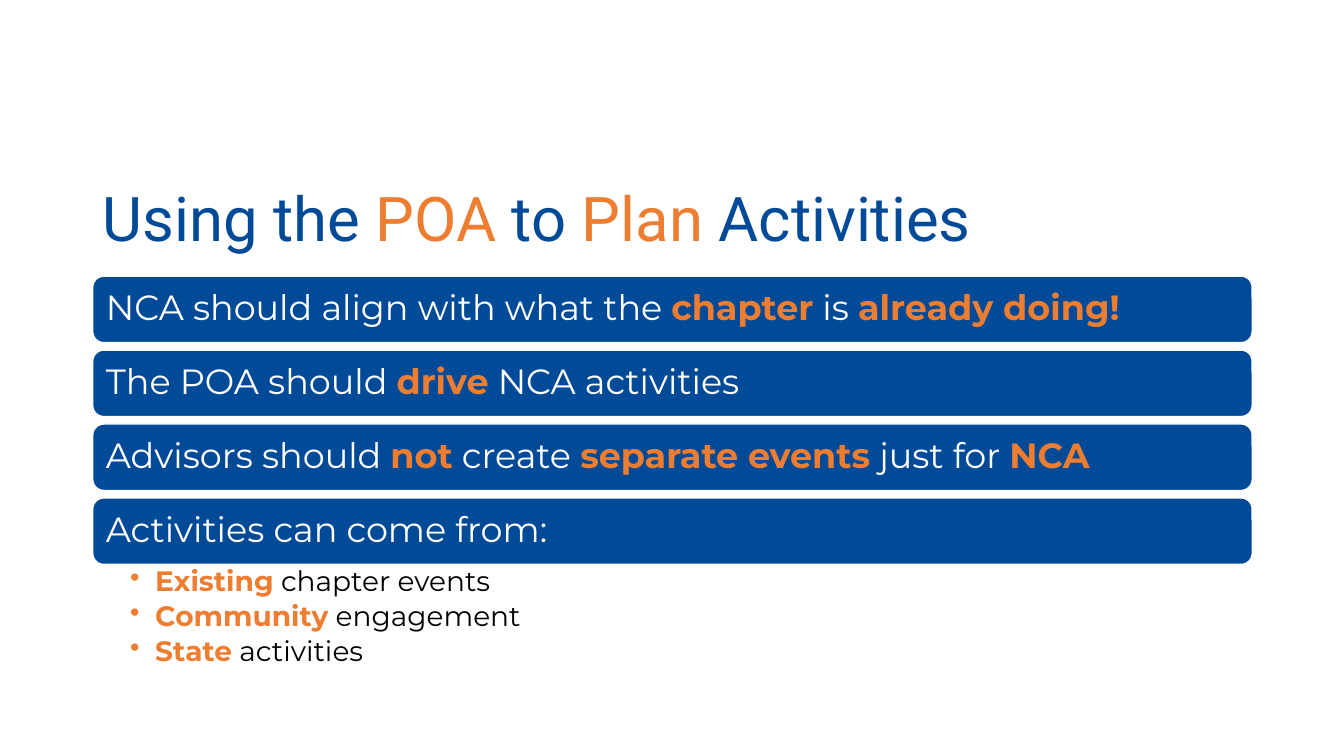
import pptx
import pptx.util
import pptx.dml.color
import pptx.enum.shapes
import pptx.enum.text
from dataclasses import dataclass
from lxml import etree

TITLE = "Using the *POA* to *Plan* Activities"
STATEMENTS = [
    "NCA should align with what the *chapter* is *already doing!*",
    "The POA should *drive* NCA activities",
    "Advisors should *not* create *separate events* just for *NCA*",
    "Activities can come from:",
]
SOURCES = ["*Existing* chapter events", "*Community* engagement", "*State* activities"]


@dataclass(frozen=True)
class Theme:
    blue: str = "004A98"
    orange: str = "ED7D31"
    white: str = "FFFFFF"
    black: str = "000000"
    heading: str = "Roboto"
    body: str = "Montserrat"
    title_size: int = 44
    statement_size: int = 25
    source_size: int = 20


THEME = Theme()
WIDTH, HEIGHT = 13.33, 7.5
LEFT, CONTENT_WIDTH = 0.92, 11.5
TITLE_TOP, TITLE_HEIGHT = 1.76, 0.87
BARS_TOP, BARS_BOTTOM, BAR_HEIGHT = 2.74, 5.6, 0.66
SOURCES_HEIGHT = 1.13
BAR_PITCH = (BARS_BOTTOM - BARS_TOP - BAR_HEIGHT) / (len(STATEMENTS) - 1)

inch = pptx.util.Inches
point = pptx.util.Pt
rgb = pptx.dml.color.RGBColor.from_string
anchors = pptx.enum.text.MSO_ANCHOR


def prepare_frame(frame, anchor, insets):
    frame.word_wrap = True
    frame.vertical_anchor = anchor
    frame.margin_left, frame.margin_top, frame.margin_right, frame.margin_bottom = map(inch, insets)


def write(paragraph, marked_text, font_name, size, color, bold_emphasis=True):
    paragraph.alignment = pptx.enum.text.PP_ALIGN.LEFT
    paragraph.line_spacing = 0.9
    paragraph.font.name = font_name
    paragraph.font.size = point(size)
    for index, words in enumerate(marked_text.split("*")):
        if words:
            emphasized = index % 2 == 1
            run = paragraph.add_run()
            run.text = words
            run.font.bold = emphasized and bold_emphasis
            run.font.color.rgb = rgb(THEME.orange if emphasized else color)


def add_bullet(paragraph):
    properties = paragraph._p.get_or_add_pPr()
    properties.set("marL", str(inch(0.25)))
    properties.set("indent", str(inch(-0.25)))
    bullet = etree.SubElement(properties, pptx.oxml.ns.qn("a:buChar"))
    bullet.set("char", "•")


def add_text_area(slide, top, height, anchor, insets):
    area = slide.shapes.add_textbox(inch(LEFT), inch(top), inch(CONTENT_WIDTH), inch(height))
    prepare_frame(area.text_frame, anchor, insets)
    return area.text_frame


def add_statement(slide, row, statement):
    bar = slide.shapes.add_shape(
        pptx.enum.shapes.MSO_SHAPE.ROUNDED_RECTANGLE,
        inch(LEFT), inch(BARS_TOP + row * BAR_PITCH), inch(CONTENT_WIDTH), inch(BAR_HEIGHT),
    )
    bar.shadow.inherit = False
    bar.fill.solid()
    bar.fill.fore_color.rgb = rgb(THEME.blue)
    bar.line.color.rgb = rgb(THEME.white)
    bar.line.width = point(1)
    prepare_frame(bar.text_frame, anchors.MIDDLE, (0.1, 0.1, 0.1, 0.1))
    write(bar.text_frame.paragraphs[0], statement, THEME.body, THEME.statement_size, THEME.white)


def main():
    deck = pptx.Presentation()
    deck.slide_width, deck.slide_height = inch(WIDTH), inch(HEIGHT)
    slide = deck.slides.add_slide(deck.slide_layouts[6])

    title = add_text_area(slide, TITLE_TOP, TITLE_HEIGHT, anchors.MIDDLE, (0.1, 0.05, 0.1, 0.05))
    write(title.paragraphs[0], TITLE, THEME.heading, THEME.title_size, THEME.blue, bold_emphasis=False)

    for row, statement in enumerate(STATEMENTS):
        add_statement(slide, row, statement)

    sources = add_text_area(slide, BARS_BOTTOM, SOURCES_HEIGHT, anchors.TOP, (0.37, 0.03, 0.19, 0.03))
    for index, source in enumerate(SOURCES):
        paragraph = sources.add_paragraph() if index else sources.paragraphs[0]
        paragraph.level = 1
        add_bullet(paragraph)
        paragraph.space_after = point(3.5)
        write(paragraph, source, THEME.body, THEME.source_size, THEME.black)

    deck.save("out.pptx")


if __name__ == "__main__":
    main()
